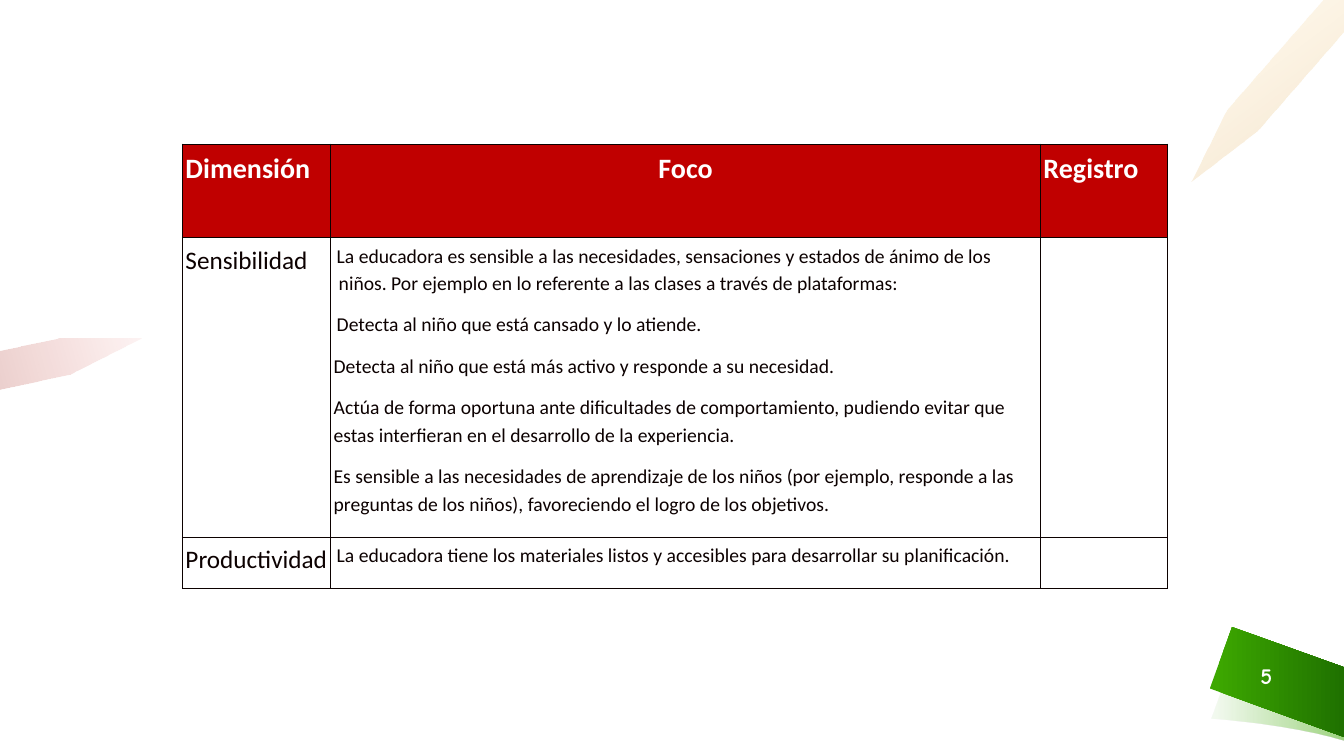
from lxml.etree import SubElement
from pptx import Presentation
from pptx.dml.color import RGBColor
from pptx.enum.text import MSO_ANCHOR, PP_ALIGN
from pptx.oxml.ns import qn
from pptx.util import Inches, Pt

INK, WHITE, RED = "0C0100", "FFFFFF", "C00000"
COLUMN_WIDTHS = (1.47, 7.04, 1.26)
ROW_HEIGHTS = (0.93, 2.97, 0.51)
HEADINGS = ("Dimensión", "Foco", "Registro")
SENSITIVITY = (
    "La educadora es sensible a las necesidades, sensaciones y estados de ánimo de los niños. "
    "Por ejemplo en lo referente a las clases a través de plataformas:",
    "Detecta al niño que está cansado y lo atiende.",
    "Detecta al niño que está más activo y responde a su necesidad.",
    "Actúa de forma oportuna ante dificultades de comportamiento, pudiendo evitar que estas "
    "interfieran en el desarrollo de la experiencia.",
    "Es sensible a las necesidades de aprendizaje de los niños (por ejemplo, responde a las "
    "preguntas de los niños), favoreciendo el logro de los objetivos.",
)
PRODUCTIVITY = (
    "La educadora tiene los materiales listos y accesibles para desarrollar su planificación.",
)


def color(hex_value):
    """Turn a hex string into a colour."""
    return RGBColor.from_string(hex_value)


def curve(start, control_1, control_2, end, steps=12):
    """List the points of a cubic curve after its start."""
    points = []
    for step in range(1, steps + 1):
        t = step / steps
        weights = ((1 - t) ** 3, 3 * t * (1 - t) ** 2, 3 * t**2 * (1 - t), t**3)
        corners = (start, control_1, control_2, end)
        points.append(tuple(sum(w * c[axis] for w, c in zip(weights, corners)) for axis in (0, 1)))
    return points


def add_gradient_outline(slide, points, stops, angle=0):
    """Draw a closed outline with a gradient of (position, colour, opacity) stops."""
    corners = [(Inches(x), Inches(y)) for x, y in points]
    builder = slide.shapes.build_freeform(*corners[0])
    builder.add_line_segments(corners[1:], close=True)
    shape = builder.convert_to_shape()
    shape.shadow.inherit = False
    shape.line.fill.background()
    shape.fill.gradient()
    shape.fill.gradient_angle = (360 - angle) % 360
    for stop, (position, hex_value, opacity) in zip(shape.fill.gradient_stops, stops):
        stop.position = position / 100
        stop.color.rgb = color(hex_value)
    for element, (_, _, opacity) in zip(shape.element.iter(qn("a:srgbClr")), stops):
        if opacity < 100:
            SubElement(element, qn("a:alpha"), val=str(opacity * 1000))


def write(paragraph, text, size=14, font="Calibri", ink=INK, bold=False,
          align=PP_ALIGN.LEFT, spacing=1.15, after=10, hanging=False):
    """Write one formatted paragraph."""
    paragraph.alignment = align
    paragraph.line_spacing = spacing
    paragraph.space_after = Pt(after)
    if hanging:
        properties = paragraph._p.get_or_add_pPr()
        properties.set("marL", str(Inches(0.05)))
        properties.set("indent", str(Inches(-0.02)))
    run = paragraph.add_run()
    run.text = text
    run.font.size = Pt(size)
    run.font.name = font
    run.font.bold = bold
    run.font.color.rgb = color(ink)


def style_cell(cell, fill):
    """Set a cell's margins, borders and fill."""
    cell.margin_left = cell.margin_right = Inches(0.03)
    cell.margin_top = cell.margin_bottom = Inches(0.03)
    properties = cell._tc.get_or_add_tcPr()
    for side in ("lnL", "lnR", "lnT", "lnB"):
        line = SubElement(properties, qn(f"a:{side}"), w=str(Pt(1)))
        SubElement(SubElement(line, qn("a:solidFill")), qn("a:srgbClr"), val=INK)
    cell.fill.solid()
    cell.fill.fore_color.rgb = color(fill)


def write_focus(cell, texts, hanging_count):
    """Write the focus paragraphs, the first ones with a hanging indent."""
    frame = cell.text_frame
    for index, text in enumerate(texts):
        paragraph = frame.add_paragraph() if index else frame.paragraphs[0]
        write(paragraph, text, hanging=index < hanging_count)


def add_observation_table(slide):
    """Add the table of dimensions, focus and record."""
    frame = slide.shapes.add_table(3, 3, Inches(1.81), Inches(1.43),
                                   Inches(sum(COLUMN_WIDTHS)), Inches(sum(ROW_HEIGHTS)))
    table = frame.table
    table.first_row = table.horz_banding = False
    for column, width in zip(table.columns, COLUMN_WIDTHS):
        column.width = Inches(width)
    for index, (row, height) in enumerate(zip(table.rows, ROW_HEIGHTS)):
        row.height = Inches(height)
        for cell in row.cells:
            style_cell(cell, WHITE if index else RED)
    for index, heading in enumerate(HEADINGS):
        write(table.cell(0, index).text_frame.paragraphs[0], heading, size=20, ink=WHITE,
              bold=True, align=PP_ALIGN.CENTER if heading == "Foco" else PP_ALIGN.LEFT)
    rows = (("Sensibilidad", SENSITIVITY, 2), ("Productividad", PRODUCTIVITY, 1))
    for index, (dimension, focus, hanging_count) in enumerate(rows, start=1):
        write(table.cell(index, 0).text_frame.paragraphs[0], dimension, size=18)
        write_focus(table.cell(index, 1), focus, hanging_count)


def add_page_number(slide, number):
    """Add the page number on the green ribbon."""
    box = slide.shapes.add_textbox(Inches(12.21), Inches(6.5), Inches(0.7), Inches(0.4))
    box.text_frame.word_wrap = True
    box.text_frame.vertical_anchor = MSO_ANCHOR.MIDDLE
    write(box.text_frame.paragraphs[0], number, size=16, font="Comic Neue", ink=WHITE,
          bold=True, align=PP_ALIGN.CENTER, spacing=1.0, after=0)


def add_decorations(slide):
    """Draw the ribbon with its shade and the two pencil shapes."""
    lower_edge = curve((12.02, 7.13), (12.02, 7.13), (12.78, 7.18), (13.33, 7.35))
    upper_edge = curve((13.33, 6.68), (12.72, 6.51), (12.24, 6.52), (12.24, 6.52))
    add_gradient_outline(slide, [(12.02, 7.13), *lower_edge, (13.33, 6.68), *upper_edge],
                         [(3, "3DA800", 6), (100, "3DA800", 50)])
    add_gradient_outline(slide, [(13.33, 6.62), (12.22, 6.22), (12, 6.83), (13.33, 7.31)],
                         [(3, "3DA800", 100), (100, "1F7100", 100)])
    add_gradient_outline(slide, [(1.4, 3.36), (0.58, 3.36), (0, 3.48), (0, 3.86), (0.7, 3.71)],
                         [(0, "D30F00", 5), (100, "9D0F00", 20)], angle=164)
    add_gradient_outline(slide, [(13.12, 0), (12.17, 1.09), (11.82, 1.8), (12.47, 1.3),
                                 (13.33, 0.31), (13.33, 0)],
                         [(0, "FFAA00", 5), (100, "C07400", 20)], angle=53)


def main():
    """Build the slide and save it."""
    presentation = Presentation()
    presentation.slide_width = Inches(13.33)
    presentation.slide_height = Inches(7.5)
    slide = presentation.slides.add_slide(presentation.slide_layouts[6])
    add_decorations(slide)
    add_page_number(slide, "5")
    add_observation_table(slide)
    presentation.save("out.pptx")


if __name__ == "__main__":
    main()
